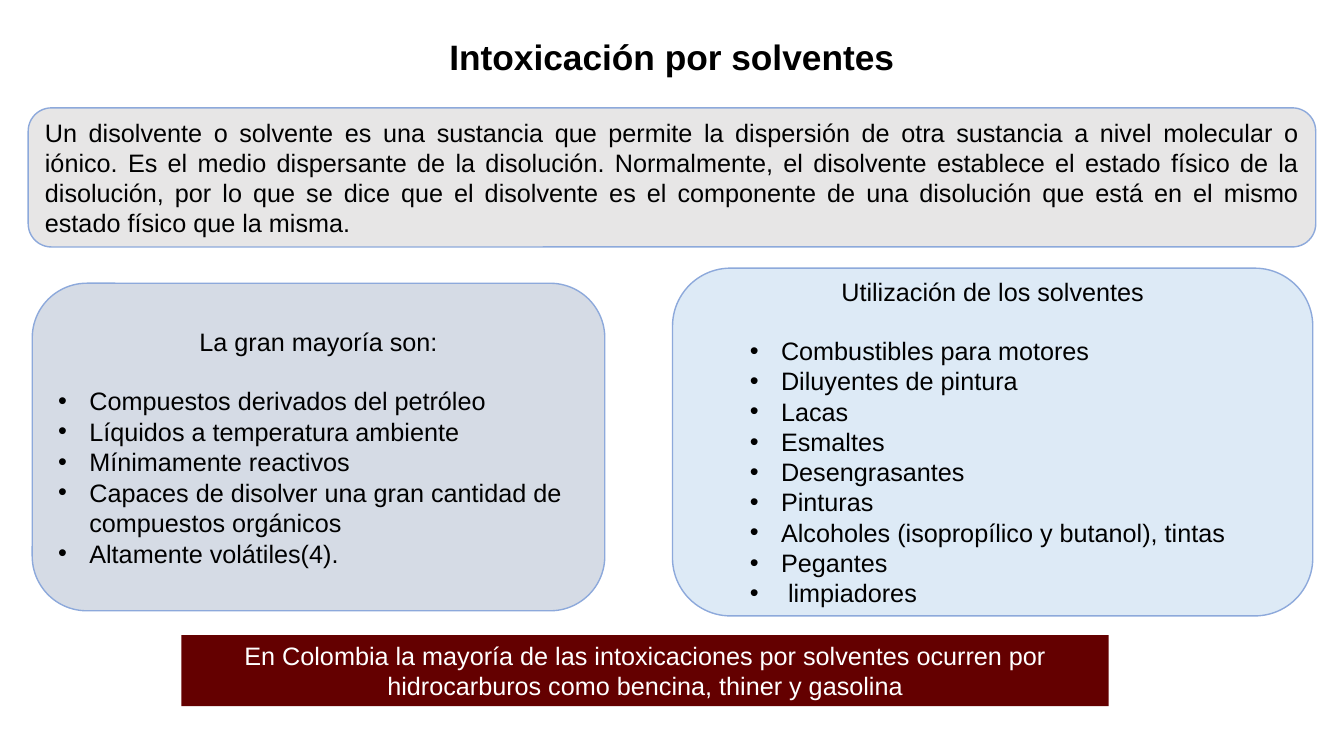
from lxml.etree import SubElement
from pptx import Presentation
from pptx.dml.color import RGBColor
from pptx.enum.shapes import MSO_SHAPE as Shape
from pptx.enum.text import MSO_ANCHOR as Anchor, PP_ALIGN as Align
from pptx.oxml.ns import qn
from pptx.util import Inches, Pt

presentation = Presentation()
presentation.slide_width = Inches(13.33)
presentation.slide_height = Inches(7.5)
slide = presentation.slides.add_slide(presentation.slide_layouts[6])


def color(hex_text):
    return RGBColor.from_string(hex_text)


def add_panel(kind, box, fill, border, paragraphs):
    """Draw a panel; box is left, top, width, height in percent of the slide."""
    sides = (presentation.slide_width, presentation.slide_height) * 2
    place = [int(side * share / 100) for side, share in zip(sides, box)]
    shape = slide.shapes.add_shape(kind, *place)
    shape.shadow.inherit = False
    if fill:
        shape.fill.solid()
        shape.fill.fore_color.rgb = color(fill)
    else:
        shape.fill.background()
    if border:
        shape.line.color.rgb = color(border)
        shape.line.width = Pt(1)
    else:
        shape.line.fill.background()
    frame = shape.text_frame
    frame.word_wrap = True
    frame.vertical_anchor = Anchor.MIDDLE
    for index, (text, style) in enumerate(paragraphs):
        paragraph = frame.paragraphs[0] if index == 0 else frame.add_paragraph()
        indent = style.get("indent")
        if indent:
            properties = paragraph._p.get_or_add_pPr()
            properties.set("marL", str(Inches(indent)))
            properties.set("indent", str(-Inches(0.31)))
            bullet_color = SubElement(properties, qn("a:buClr"))
            SubElement(bullet_color, qn("a:srgbClr"), val="000000")
            SubElement(properties, qn("a:buFont"), typeface="Arial")
            SubElement(properties, qn("a:buChar"), char="•")
        paragraph.alignment = style.get("align", Align.CENTER)
        paragraph.line_spacing = style.get("spacing", 1.0)
        paragraph.space_after = Pt(style.get("after", 0))
        run = paragraph.add_run()
        run.text = text
        run.font.name = "Arial"
        run.font.size = Pt(style.get("size", 18))
        run.font.bold = style.get("bold", False)
        run.font.color.rgb = color(style.get("color", "000000"))


BORDER = "8DA9DB"
BLANK_LINE = 20.7

# Title
add_panel(Shape.RECTANGLE, (22.95, 4.4, 54.08, 6.8), None, None, [
    ("Intoxicación por solventes", {"size": 25.2, "bold": True, "spacing": 0.9}),
])

# Definition
definition = (
    "Un disolvente o solvente es una sustancia que permite la dispersión de otra "
    "sustancia a nivel molecular o iónico. Es el medio dispersante de la disolución. "
    "Normalmente, el disolvente establece el estado físico de la disolución, por lo "
    "que se dice que el disolvente es el componente de una disolución que está en el "
    "mismo estado físico que la misma."
)
add_panel(Shape.ROUNDED_RECTANGLE, (2.1, 14.27, 95.8, 18.4), "E7E6E6", BORDER,
          [(definition, {"align": Align.JUSTIFY})])

# Properties and uses: a centred heading over a bulleted list
lists = [
    ((2.4, 37.47, 42.6, 43.33), "D5DBE5", "La gran mayoría son:",
     {"indent": 0.31, "align": Align.LEFT, "spacing": 1.01},
     ["Compuestos derivados del petróleo", "Líquidos a temperatura ambiente",
      "Mínimamente reactivos",
      "Capaces de disolver una gran cantidad de compuestos orgánicos",
      "Altamente volátiles(4)."]),
    ((50.04, 35.47, 47.64, 46), "DDEAF6", "Utilización de los solventes",
     {"indent": 0.81, "align": Align.JUSTIFY},
     ["Combustibles para motores", "Diluyentes de pintura", "Lacas", "Esmaltes",
      "Desengrasantes", "Pinturas", "Alcoholes (isopropílico y butanol), tintas",
      "Pegantes", " limpiadores"]),
]
for box, fill, heading, item_style, items in lists:
    heading_style = {"after": BLANK_LINE, "spacing": item_style.get("spacing", 1.0)}
    add_panel(Shape.ROUNDED_RECTANGLE, box, fill, BORDER,
              [(heading, heading_style)] + [(item, item_style) for item in items])

# Closing banner
add_panel(Shape.RECTANGLE, (13.5, 84, 69, 9.4), "640000", None, [
    ("En Colombia la mayoría de las intoxicaciones por solventes ocurren por "
     "hidrocarburos como bencina, thiner y gasolina", {"color": "FFFFFF"}),
])

presentation.save("out.pptx")
